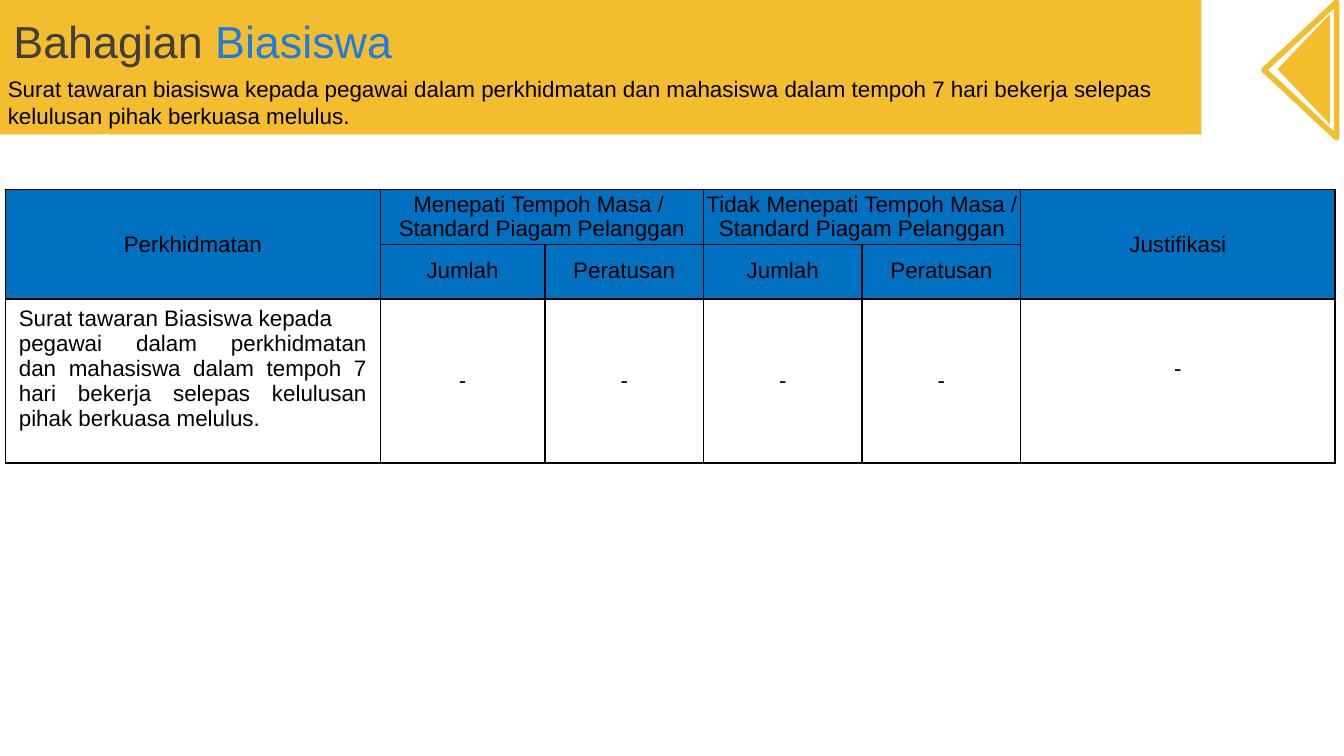
from dataclasses import dataclass

from lxml.etree import SubElement
from pptx import Presentation
from pptx.dml.color import RGBColor
from pptx.enum.shapes import MSO_SHAPE
from pptx.enum.text import MSO_ANCHOR, MSO_AUTO_SIZE, PP_ALIGN
from pptx.oxml.ns import qn
from pptx.util import Inches, Pt


@dataclass(frozen=True)
class Theme:
    font: str = "Arial"
    title_size: int = 24
    body_size: int = 12
    gold: str = "F4BD2D"
    blue: str = "0070C0"
    accent: str = "1C7DE1"
    gray: str = "3F3F3F"
    black: str = "000000"
    border_width: int = 1
    outline_width: int = 3


class SlideBuilder:
    def __init__(self, presentation, theme):
        self.theme = theme
        self.unit = presentation.slide_width / 100
        self.slide = presentation.slides.add_slide(presentation.slide_layouts[5])

    def grid(self, *values):
        return [round(value * self.unit) for value in values]

    def apply(self, target, values):
        for name, value in values.items():
            setattr(target, name, value)

    def style_font(self, font, size, color):
        self.apply(font, {"name": self.theme.font, "size": Pt(size)})
        font.color.rgb = RGBColor.from_string(color)

    def shape(self, kind, box, fill=None, line=None, rotation=0):
        shape = self.slide.shapes.add_shape(kind, *self.grid(*box))
        shape.shadow.inherit = False
        shape.rotation = rotation
        if fill:
            shape.fill.solid()
            shape.fill.fore_color.rgb = RGBColor.from_string(fill)
        else:
            shape.fill.background()
        if line:
            shape.line.color.rgb = RGBColor.from_string(line)
            shape.line.width = Pt(self.theme.outline_width)
        else:
            shape.line.fill.background()

    def title(self, box, parts):
        title = self.slide.shapes.title
        names = ("left", "top", "width", "height")
        self.apply(title, dict(zip(names, self.grid(*box))))
        self.apply(title.text_frame, {
            "vertical_anchor": MSO_ANCHOR.MIDDLE,
            "auto_size": MSO_AUTO_SIZE.NONE,
            "word_wrap": True,
        })
        paragraph = title.text_frame.paragraphs[0]
        paragraph.alignment = PP_ALIGN.LEFT
        for text, color in parts:
            run = paragraph.add_run()
            run.text = text
            self.style_font(run.font, self.theme.title_size, color)
        title.element.getparent().append(title.element)

    def paragraphs(self, frame, text, alignment, spacing=1.0):
        frame.text = text
        for paragraph in frame.paragraphs:
            self.apply(paragraph, {"alignment": alignment, "line_spacing": spacing})
            for run in paragraph.runs:
                self.style_font(run.font, self.theme.body_size, self.theme.black)

    def text(self, box, text):
        frame = self.slide.shapes.add_textbox(*self.grid(*box)).text_frame
        self.apply(frame, {"word_wrap": True, "auto_size": MSO_AUTO_SIZE.SHAPE_TO_FIT_TEXT})
        self.paragraphs(frame, text, PP_ALIGN.JUSTIFY)

    def table(self, left, top, columns, rows):
        box = self.grid(left, top, sum(columns), sum(rows))
        table = self.slide.shapes.add_table(len(rows), len(columns), *box).table
        self.apply(table, {"first_row": False, "horz_banding": False})
        for column, width in zip(table.columns, self.grid(*columns)):
            column.width = width
        for row, height in zip(table.rows, self.grid(*rows)):
            row.height = height
        for cell in table.iter_cells():
            self.border(cell)
            cell.fill.background()
        return table

    def border(self, cell):
        properties = cell._tc.get_or_add_tcPr()
        for side in ("a:lnL", "a:lnR", "a:lnT", "a:lnB"):
            line = SubElement(properties, qn(side), w=str(Pt(self.theme.border_width)))
            fill = SubElement(line, qn("a:solidFill"))
            SubElement(fill, qn("a:srgbClr"), val=self.theme.black)

    def cell(self, cell, text, margins, alignment=PP_ALIGN.CENTER, spacing=1.0, fill=None):
        names = ("margin_left", "margin_top", "margin_right", "margin_bottom")
        self.apply(cell, dict(zip(names, map(Inches, margins))))
        cell.vertical_anchor = MSO_ANCHOR.MIDDLE
        self.paragraphs(cell.text_frame, text, alignment, spacing)
        if fill:
            cell.fill.solid()
            cell.fill.fore_color.rgb = RGBColor.from_string(fill)


def main():
    presentation = Presentation()
    presentation.slide_width = Inches(10)
    presentation.slide_height = round(presentation.slide_width * 9 / 16)
    theme = Theme()
    builder = SlideBuilder(presentation, theme)

    triangle = MSO_SHAPE.ISOSCELES_TRIANGLE
    builder.shape(triangle, (92.9, 3.2, 8.2, 3.9), fill=theme.gold, rotation=270)
    builder.shape(triangle, (91.7, 2.5, 10.1, 5.4), line=theme.gold, rotation=270)
    builder.shape(MSO_SHAPE.RECTANGLE, (0, 0, 89.4, 10), fill=theme.gold)
    builder.text(
        (-0.4, 5.1, 89.1, 5),
        "Surat tawaran biasiswa kepada pegawai dalam perkhidmatan dan mahasiswa "
        "dalam tempoh 7 hari bekerja selepas \nkelulusan pihak berkuasa melulus.",
    )
    builder.title((0, 0.1, 46.5, 5.9), [("Bahagian ", theme.gray), ("Biasiswa", theme.accent)])

    table = builder.table(0.4, 14.1, [27.9, 12.25, 11.8, 11.8, 11.8, 23.4], [4.1, 4.05, 12.2])
    headings = [
        (0, 0, 2, 1, "Perkhidmatan", 1.0),
        (0, 1, 1, 2, "Menepati Tempoh Masa / \nStandard Piagam Pelanggan", 0.96),
        (0, 3, 1, 2, "Tidak Menepati Tempoh Masa / Standard Piagam Pelanggan", 0.96),
        (0, 5, 2, 1, "Justifikasi", 1.0),
    ]
    headings += [
        (1, column, 1, 1, text, 0.88)
        for column, text in enumerate(["Jumlah", "Peratusan"] * 2, start=1)
    ]
    for row, column, height, width, text, spacing in headings:
        cell = table.cell(row, column)
        if height * width > 1:
            cell.merge(table.cell(row + height - 1, column + width - 1))
        builder.cell(cell, text, (0, 0, 0, 0), spacing=spacing, fill=theme.blue)

    service = (
        "Surat tawaran Biasiswa kepada \npegawai dalam perkhidmatan\v"
        "dan mahasiswa dalam tempoh 7 hari bekerja selepas kelulusan "
        "pihak berkuasa melulus."
    )
    builder.cell(table.cell(2, 0), service, (0.1, 0.05, 0.1, 0.23), PP_ALIGN.JUSTIFY)
    for column in range(1, 5):
        builder.cell(table.cell(2, column), "-", (0.07, 0.05, 0.07, 0.05))
    builder.cell(table.cell(2, 5), "-", (0.07, 0.05, 0.07, 0.23))

    presentation.save("out.pptx")


if __name__ == "__main__":
    main()
